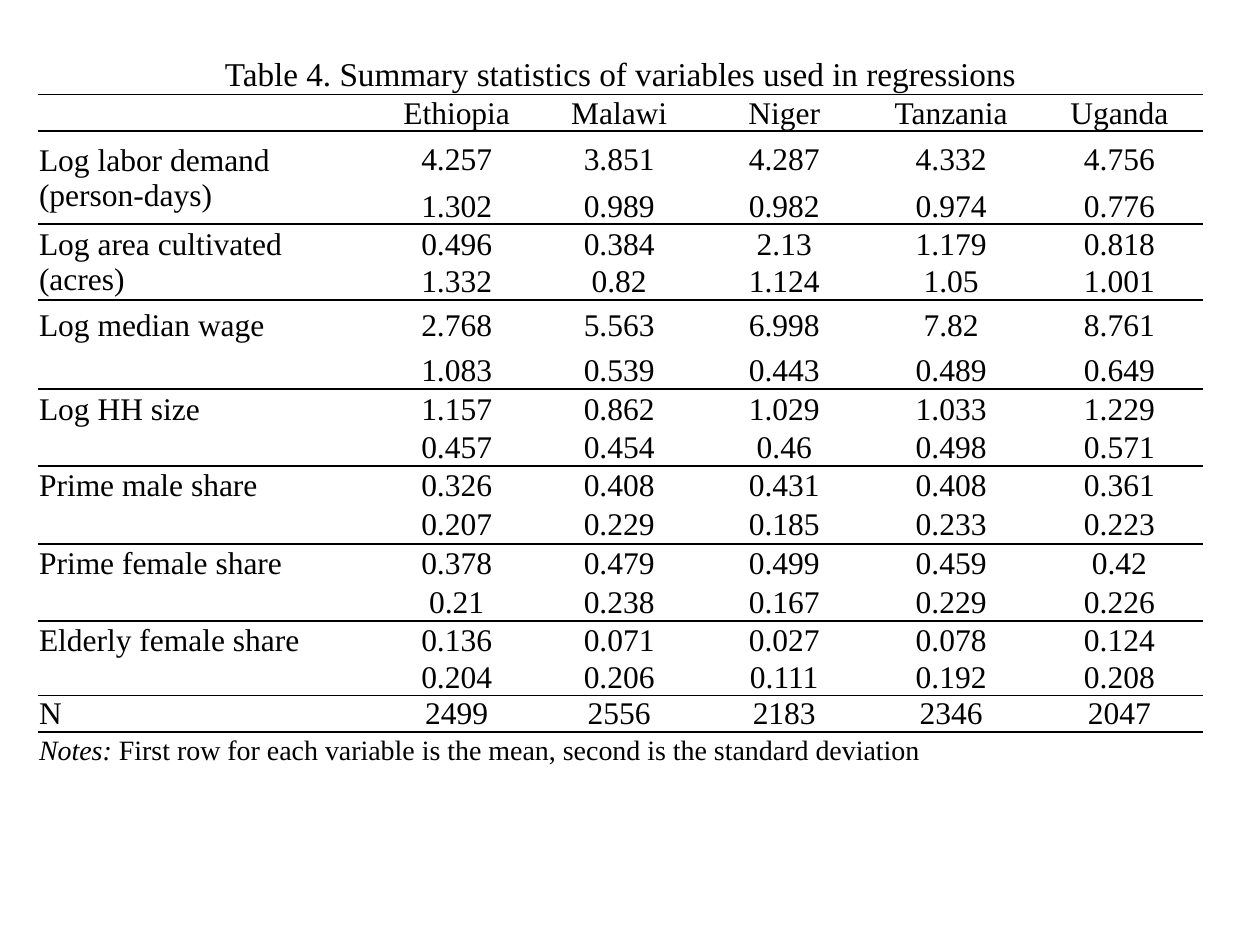
import lxml.etree
import pptx
import pptx.dml.color
import pptx.enum.text
import pptx.oxml.ns
import pptx.util

Inches = pptx.util.Inches
Pt = pptx.util.Pt
BLACK = pptx.dml.color.RGBColor(0, 0, 0)
FONT = "Times New Roman"
CENTER = pptx.enum.text.PP_ALIGN.CENTER
LEFT = pptx.enum.text.PP_ALIGN.LEFT

title = "Table 4. Summary statistics of variables used in regressions"
countries = ["Ethiopia", "Malawi", "Niger", "Tanzania", "Uganda"]
variables = [
    ("Log labor demand (person-days)",
     ["4.257", "3.851", "4.287", "4.332", "4.756"],
     ["1.302", "0.989", "0.982", "0.974", "0.776"]),
    ("Log area cultivated (acres)",
     ["0.496", "0.384", "2.13", "1.179", "0.818"],
     ["1.332", "0.82", "1.124", "1.05", "1.001"]),
    ("Log median wage",
     ["2.768", "5.563", "6.998", "7.82", "8.761"],
     ["1.083", "0.539", "0.443", "0.489", "0.649"]),
    ("Log HH size",
     ["1.157", "0.862", "1.029", "1.033", "1.229"],
     ["0.457", "0.454", "0.46", "0.498", "0.571"]),
    ("Prime male share",
     ["0.326", "0.408", "0.431", "0.408", "0.361"],
     ["0.207", "0.229", "0.185", "0.233", "0.223"]),
    ("Prime female share",
     ["0.378", "0.479", "0.499", "0.459", "0.42"],
     ["0.21", "0.238", "0.167", "0.229", "0.226"]),
    ("Elderly female share",
     ["0.136", "0.071", "0.027", "0.078", "0.124"],
     ["0.204", "0.206", "0.111", "0.192", "0.208"]),
]
sample_sizes = ["2499", "2556", "2183", "2346", "2047"]
note_label = "Notes:"
note_text = " First row for each variable is the mean, second is the standard deviation"

rows = [[title] + [""] * 5, [""] + countries]
for label, means, deviations in variables:
    rows += [[label] + means, [""] + deviations]
rows += [["N"] + sample_sizes, [""] * 6]
notes_row = len(rows) - 1
ruled_rows = {1, *range(2, notes_row, 2), notes_row}

column_widths = [2.69, 1.27, 1.31, 1.31, 1.34, 1.33]
row_heights = [0.31, 0.29, 0.45, 0.29, 0.31, 0.29, 0.4, 0.31, 0.31,
               0.3, 0.31, 0.31, 0.31, 0.3, 0.3, 0.29, 0.29, 0.29]


def add_border(cell, side, position, visible):
    border = lxml.etree.Element(pptx.oxml.ns.qn("a:" + side), w=str(Pt(1)))
    if visible:
        fill = lxml.etree.SubElement(border, pptx.oxml.ns.qn("a:solidFill"))
        lxml.etree.SubElement(fill, pptx.oxml.ns.qn("a:srgbClr"), val=str(BLACK))
    else:
        lxml.etree.SubElement(border, pptx.oxml.ns.qn("a:noFill"))
    cell._tc.get_or_add_tcPr().insert(position, border)


presentation = pptx.Presentation()
presentation.slide_width = Inches(10)
presentation.slide_height = Inches(7.5)
slide = presentation.slides.add_slide(presentation.slide_layouts[6])

statistics = slide.shapes.add_table(
    len(rows), len(column_widths), Inches(0.3), Inches(0.44),
    Inches(sum(column_widths)), Inches(sum(row_heights))).table
statistics.first_row = False
statistics.horz_banding = False
for column, width in zip(statistics.columns, column_widths):
    column.width = Inches(width)
for row, height in zip(statistics.rows, row_heights):
    row.height = Inches(height)

for r, values in enumerate(rows):
    size = {0: 19, notes_row: 16}.get(r, 18)
    for c, value in enumerate(values):
        cell = statistics.cell(r, c)
        cell.margin_left = cell.margin_right = cell.margin_top = Inches(0.01)
        cell.margin_bottom = 0
        cell.vertical_anchor = pptx.enum.text.MSO_ANCHOR.MIDDLE
        cell.fill.background()
        borders = {"lnL": False, "lnR": False,
                   "lnT": r in ruled_rows, "lnB": r + 1 in ruled_rows}
        for position, (side, visible) in enumerate(borders.items()):
            add_border(cell, side, position, visible)
        paragraph = cell.text_frame.paragraphs[0]
        if value:
            paragraph.add_run().text = value
        paragraph.alignment = CENTER if c or r == 0 else LEFT
        paragraph.font.name = FONT
        paragraph.font.size = Pt(size)
        paragraph.font.color.rgb = BLACK

notes = statistics.cell(notes_row, 0).text_frame.paragraphs[0]
for text, italic in [(note_label, True), (note_text, False)]:
    run = notes.add_run()
    run.text = text
    run.font.italic = italic

for r in (0, notes_row):
    statistics.cell(r, 0).merge(statistics.cell(r, 5))
for r in (2, 4):
    statistics.cell(r, 0).merge(statistics.cell(r + 1, 0))

presentation.save("out.pptx")
